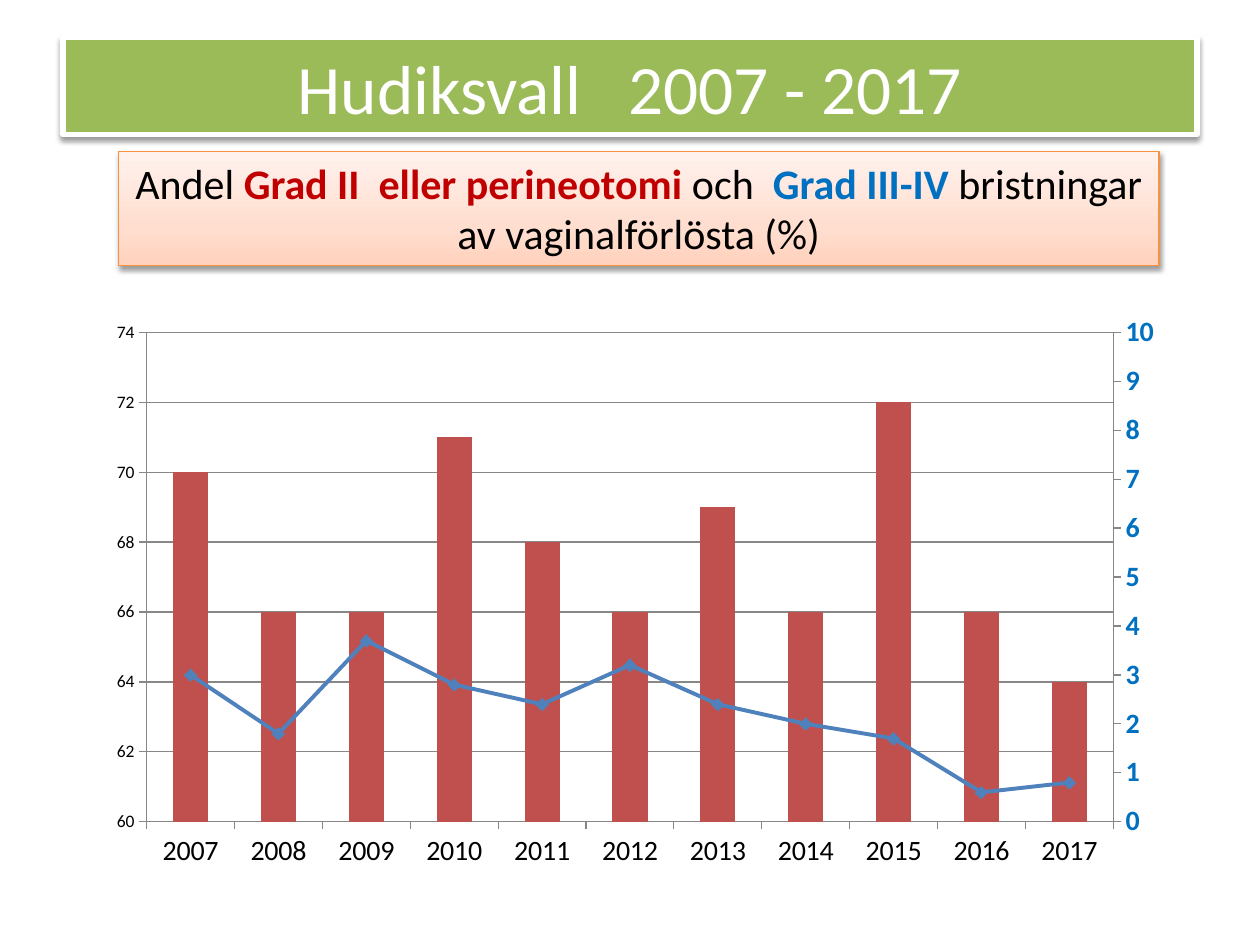
from copy import deepcopy
from pptx import Presentation
from pptx.chart.axis import ValueAxis
from pptx.chart.data import CategoryChartData
from pptx.dml.color import RGBColor
from pptx.enum.chart import XL_CHART_TYPE, XL_MARKER_STYLE, XL_TICK_MARK
from pptx.enum.shapes import MSO_SHAPE
from pptx.enum.text import MSO_ANCHOR, MSO_AUTO_SIZE, PP_ALIGN
from pptx.oxml import parse_xml
from pptx.oxml.ns import nsdecls, qn
from pptx.util import Inches, Pt

WHITE = RGBColor(0xFF, 0xFF, 0xFF)
BLACK = RGBColor(0, 0, 0)
GREEN = RGBColor(0x9B, 0xBB, 0x59)
ORANGE = RGBColor(0xF6, 0x92, 0x40)
RED = RGBColor(0xC0, 0, 0)
BLUE = RGBColor(0, 0x70, 0xC0)
BAR = RGBColor(0xC0, 0x50, 0x4D)
LINE = RGBColor(0x4F, 0x81, 0xBD)
GREY = RGBColor(0x86, 0x86, 0x86)
PEACH = [(0, RGBColor(0xFF, 0xD2, 0xBD)), (0.35, RGBColor(0xFF, 0xDE, 0xD0)),
         (1, RGBColor(0xFF, 0xF2, 0xED))]

HEAD = [
    [("Andel ", BLACK, False), ("Grad II  eller perineotomi ", RED, True),
     ("och  ", BLACK, False), ("Grad III-IV ", BLUE, True),
     ("bristningar ", BLACK, False)],
    [("av vaginalförlösta (%)", BLACK, False)],
]
YEARS = [str(year) for year in range(2007, 2018)]
TEARS = [70, 66, 66, 71, 68, 66, 69, 66, 72, 66, 64]
SEVERE = [3, 1.8, 3.7, 2.8, 2.4, 3.2, 2.4, 2, 1.7, 0.6, 0.8]

LAYOUT = f"""<c:layout {nsdecls('c')}><c:manualLayout>
<c:layoutTarget val="inner"/><c:xMode val="edge"/><c:yMode val="edge"/>
<c:x val="0.057"/><c:y val="0.05"/><c:w val="0.886"/><c:h val="0.85"/>
</c:manualLayout></c:layout>"""
PLOT = f"""<c:lineChart {nsdecls('c')}><c:grouping val="standard"/>
<c:varyColors val="0"/><c:marker val="1"/>
<c:axId val="501"/><c:axId val="502"/></c:lineChart>"""
RIGHT = f"""<c:valAx {nsdecls('c')}><c:axId val="502"/><c:scaling/>
<c:delete val="0"/><c:axPos val="r"/><c:majorTickMark val="out"/>
<c:tickLblPos val="nextTo"/><c:crossAx val="501"/><c:crosses val="max"/>
</c:valAx>"""
HIDDEN = f"""<c:catAx {nsdecls('c')}><c:axId val="501"/><c:scaling/>
<c:delete val="1"/><c:axPos val="b"/><c:crossAx val="502"/></c:catAx>"""


def style(item, **values):
    for name, value in values.items():
        setattr(item, name, value)


def paint(font, size, color, bold=False):
    style(font, name="Calibri", size=Pt(size), bold=bold)
    font.color.rgb = color


def outline(line, color, width):
    line.color.rgb = color
    line.width = Pt(width)


def shade(shape):
    """Drop a soft shadow below the shape."""
    shape.shadow.inherit = False
    shape._element.spPr.find(qn("a:effectLst")).append(parse_xml(
        f'<a:outerShdw {nsdecls("a")} blurRad="{Pt(3.1)}" dist="{Pt(1.6)}" '
        'dir="5400000" rotWithShape="0"><a:srgbClr val="000000">'
        '<a:alpha val="38000"/></a:srgbClr></a:outerShdw>'))


def add_title(slide):
    title = slide.shapes.title
    style(title, left=Inches(0.5), top=Inches(0.3),
          width=Inches(9), height=Inches(0.77))
    title.fill.solid()
    title.fill.fore_color.rgb = GREEN
    outline(title.line, WHITE, 3)
    shade(title)
    frame = title.text_frame
    frame.text = "Hudiksvall   2007 - 2017"
    style(frame, auto_size=MSO_AUTO_SIZE.NONE,
          vertical_anchor=MSO_ANCHOR.MIDDLE)
    para = frame.paragraphs[0]
    para.alignment = PP_ALIGN.CENTER
    paint(para.runs[0].font, 39.6, WHITE)


def fade(fill, stops, angle):
    fill.gradient()
    fill.gradient_angle = angle
    first = fill.gradient_stops[0]._gs
    first.addnext(deepcopy(first))
    for stop, (place, color) in zip(fill.gradient_stops, stops):
        stop.position = place
        stop.color.rgb = color


def add_head(slide):
    box = slide.shapes.add_shape(MSO_SHAPE.RECTANGLE, Inches(0.94),
                                 Inches(1.2), Inches(8.26), Inches(0.91))
    fade(box.fill, PEACH, 90)
    outline(box.line, ORANGE, 0.75)
    shade(box)
    frame = box.text_frame
    style(frame, word_wrap=False, auto_size=MSO_AUTO_SIZE.SHAPE_TO_FIT_TEXT,
          vertical_anchor=MSO_ANCHOR.TOP)
    for i, parts in enumerate(HEAD):
        para = frame.add_paragraph() if i else frame.paragraphs[0]
        para.alignment = PP_ALIGN.CENTER
        for text, color, bold in parts:
            run = para.add_run()
            run.text = text
            paint(run.font, 24, color, bold)


def set_axis(axis, color, bold=False, **scale):
    style(axis, major_tick_mark=XL_TICK_MARK.OUTSIDE,
          minor_tick_mark=XL_TICK_MARK.NONE, **scale)
    paint(axis.tick_labels.font, 16, color, bold)
    outline(axis.format.line, GREY, 0.75)


def add_right(chart):
    """Move the second series to a line plot on a right-hand axis."""
    area = chart._chartSpace.find(qn("c:chart")).find(qn("c:plotArea"))
    bars = area.find(qn("c:barChart"))
    ser = bars.findall(qn("c:ser"))[1]
    for flag in ser.findall(qn("c:invertIfNegative")):
        ser.remove(flag)
    plot = parse_xml(PLOT)
    plot.find(qn("c:varyColors")).addnext(ser)
    bars.addnext(plot)
    right = parse_xml(RIGHT)
    area.find(qn("c:valAx")).addnext(right)
    right.addnext(parse_xml(HIDDEN))
    for old in area.findall(qn("c:layout")):
        area.remove(old)
    area.insert(0, parse_xml(LAYOUT))
    return ValueAxis(right)


def add_graph(slide):
    data = CategoryChartData()
    data.categories = YEARS
    data.add_series("Series 1", TEARS)
    data.add_series("Series 2", SEVERE)
    chart = slide.shapes.add_chart(
        XL_CHART_TYPE.COLUMN_CLUSTERED, Inches(0.67), Inches(2.41),
        Inches(8.66), Inches(4.57), data).chart
    style(chart, has_legend=False, has_title=False)
    paint(chart.font, 10, BLACK)
    right = add_right(chart)
    left = chart.value_axis
    set_axis(chart.category_axis, BLACK)
    set_axis(left, RED, True, minimum_scale=40, maximum_scale=80,
             major_unit=5, has_major_gridlines=True)
    set_axis(right, BLUE, True, minimum_scale=0, maximum_scale=10,
             major_unit=1)
    outline(left.major_gridlines.format.line, GREY, 0.75)
    for axis in (left, right):
        style(axis.tick_labels, number_format="0",
              number_format_is_linked=False)
    bars, lines = chart.plots
    style(bars, gap_width=150, vary_by_categories=False)
    fill = bars.series[0].format.fill
    fill.solid()
    fill.fore_color.rgb = BAR
    curve = lines.series[0]
    curve.smooth = False
    outline(curve.format.line, LINE, 2.25)
    mark = curve.marker
    style(mark, style=XL_MARKER_STYLE.DIAMOND, size=7)
    mark.format.fill.solid()
    mark.format.fill.fore_color.rgb = LINE
    outline(mark.format.line, LINE, 0.75)


def main():
    deck = Presentation()
    style(deck, slide_width=Inches(10), slide_height=Inches(7.5))
    slide = deck.slides.add_slide(deck.slide_layouts[5])
    add_title(slide)
    add_head(slide)
    add_graph(slide)
    deck.save("out.pptx")


if __name__ == "__main__":
    main()
